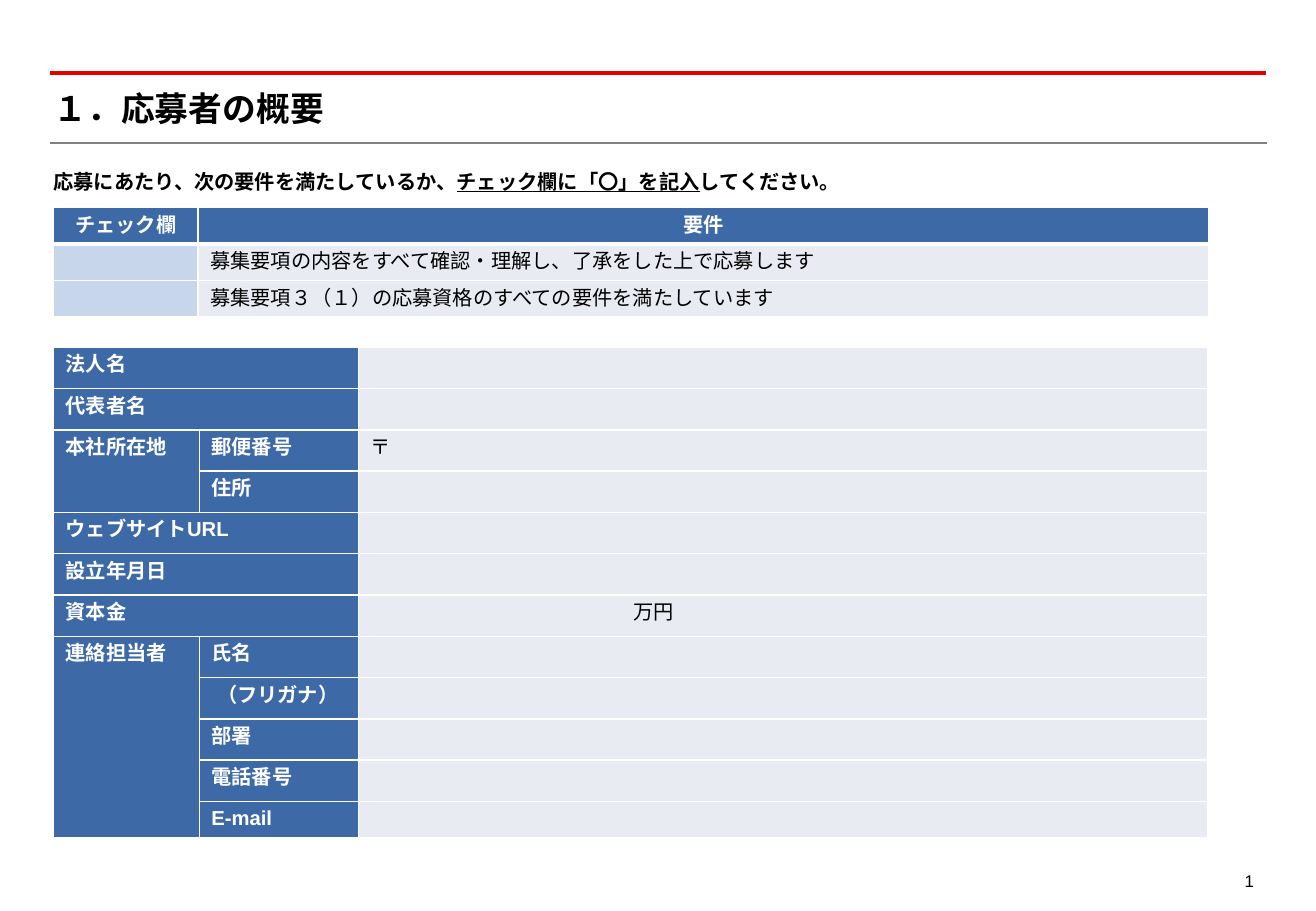
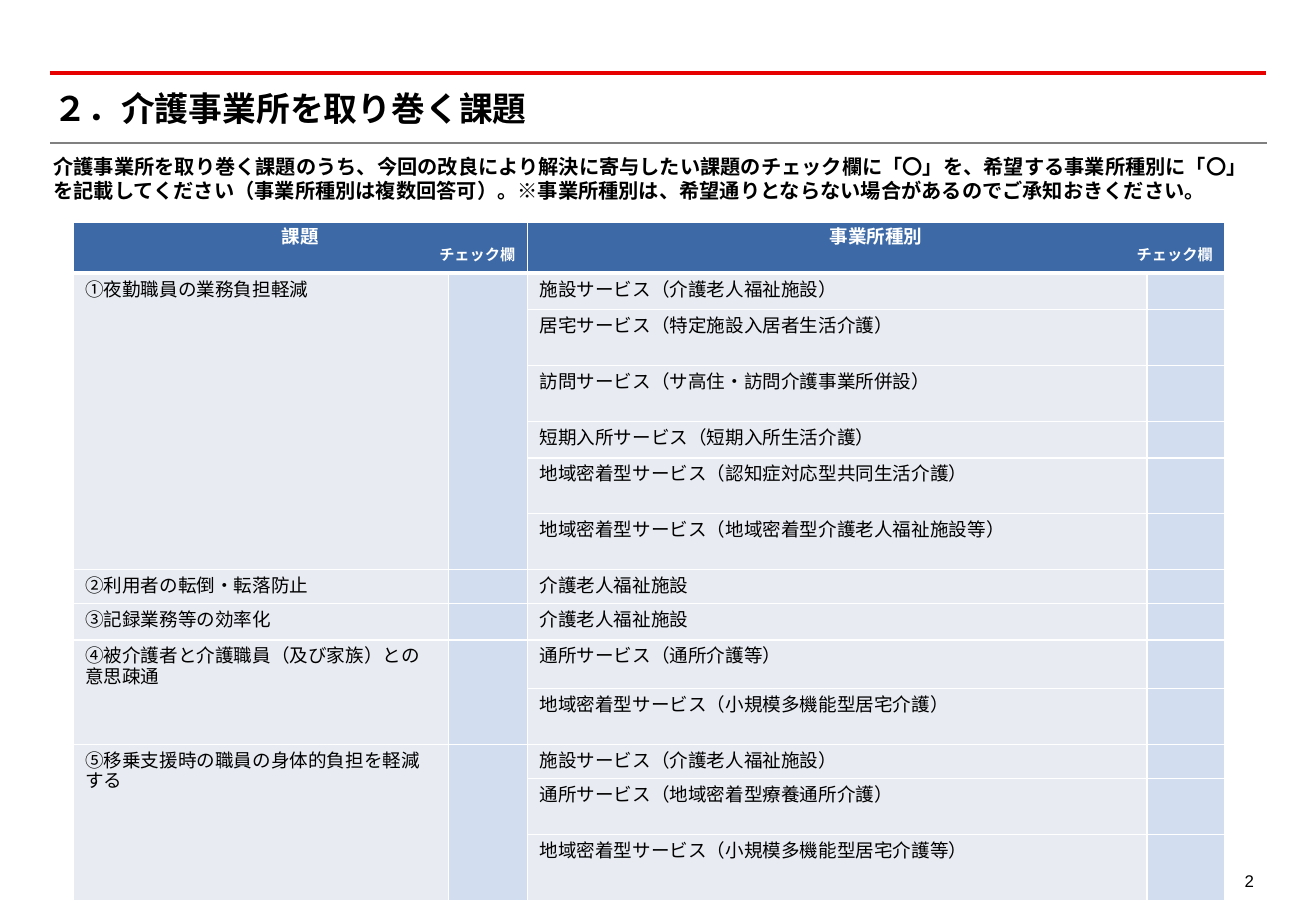
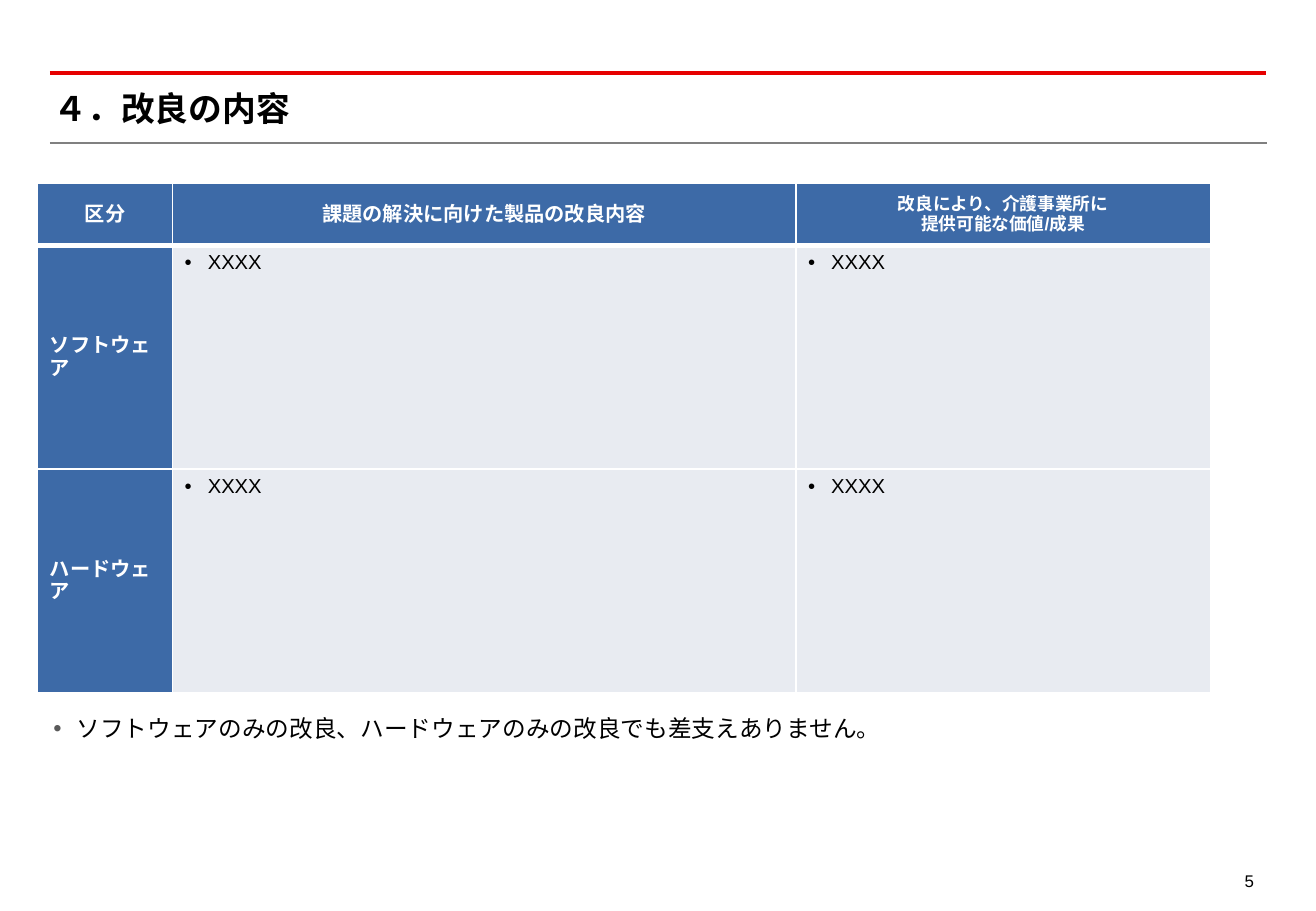
from lxml import etree
from pptx import Presentation
from pptx.dml.color import RGBColor
from pptx.enum.shapes import MSO_CONNECTOR
from pptx.enum.text import MSO_ANCHOR, PP_ALIGN
from pptx.oxml.ns import qn
from pptx.util import Inches, Pt

STRAIGHT = MSO_CONNECTOR.STRAIGHT
LEFT, CENTER, RIGHT = PP_ALIGN.LEFT, PP_ALIGN.CENTER, PP_ALIGN.RIGHT
TOP, MIDDLE = MSO_ANCHOR.TOP, MSO_ANCHOR.MIDDLE

FONT = "Arial"
COLORS = {
    "black": "000000", "white": "FFFFFF", "red": "E60000", "gray": "808080",
    "bullet": "5A5A5A", "blue": "3D6AA7", "pale": "E8EBF1",
    "check": "C7D6EA", "light_check": "D2DEEF",
}
STYLES = {
    "header": {"fill": "blue", "color": "white", "bold": True, "align": CENTER},
    "label": {"fill": "blue", "color": "white", "bold": True},
    "value": {"fill": "pale"},
    "check": {"fill": "check"},
    "light_check": {"fill": "light_check"},
}
MARGIN_LEFT = 0.44
TEXT_WIDTH = 9.91
HANGING = 0.19

COMPANY_ROWS = [
    ("法人名", [""]),
    ("代表者名", [""]),
    ("本社所在地", ["郵便番号", "住所"]),
    ("ウェブサイトURL", [""]),
    ("設立年月日", [""]),
    ("資本金", [""]),
    ("連絡担当者", ["氏名", " （フリガナ）", "部署", "電話番号", "E-mail"]),
]
COMPANY_VALUES = {"郵便番号": ("〒", 0.1), "資本金": ("万円", 2.26)}
REQUIREMENTS = [
    "募集要項の内容をすべて確認・理解し、了承をした上で応募します",
    "募集要項３（１）の応募資格のすべての要件を満たしています",
]
ISSUES = [
    ("①夜勤職員の業務負担軽減", [
        ("施設サービス（介護老人福祉施設）", 0.3),
        ("居宅サービス（特定施設入居者生活介護）", 0.46),
        ("訪問サービス（サ高住・訪問介護事業所併設）", 0.46),
        ("短期入所サービス（短期入所生活介護）", 0.3),
        ("地域密着型サービス（認知症対応型共同生活介護）", 0.46),
        ("地域密着型サービス（地域密着型介護老人福祉施設等）", 0.46)]),
    ("②利用者の転倒・転落防止", [("介護老人福祉施設", 0.28)]),
    ("③記録業務等の効率化", [("介護老人福祉施設", 0.3)]),
    ("④被介護者と介護職員（及び家族）との意思疎通", [
        ("通所サービス（通所介護等）", 0.4),
        ("地域密着型サービス（小規模多機能型居宅介護）", 0.46)]),
    ("⑤移乗支援時の職員の身体的負担を軽減する", [
        ("施設サービス（介護老人福祉施設）", 0.28),
        ("通所サービス（地域密着型療養通所介護）", 0.46),
        ("地域密着型サービス（小規模多機能型居宅介護等）", 0.55)]),
]


def rgb(name):
    return RGBColor.from_string(COLORS[name])


def add_span(para, text, size=12, color="black", **font_values):
    span = para.add_run()
    span.text = text
    values = {"name": FONT, "size": Pt(size), **font_values}
    for name, value in values.items():
        setattr(span.font, name, value)
    span.font.color.rgb = rgb(color)
    etree.SubElement(span.font._element, qn("a:ea"), typeface=FONT)


def add_bullet(para, color):
    properties = para._p.get_or_add_pPr()
    properties.set("marL", str(Inches(HANGING)))
    properties.set("indent", str(-Inches(HANGING)))
    holder = etree.SubElement(properties, qn("a:buClr"))
    etree.SubElement(holder, qn("a:srgbClr"), val=COLORS[color])
    etree.SubElement(properties, qn("a:buFont"), typeface=FONT)
    etree.SubElement(properties, qn("a:buChar"), char="•")


def add_text(page, place, spans, align=LEFT, inset=0, wrap=True, anchor=TOP, bullet=None):
    box = page.shapes.add_textbox(*map(Inches, place))
    frame = box.text_frame
    values = {"word_wrap": wrap, "vertical_anchor": anchor}
    for side in ("left", "top", "right", "bottom"):
        values["margin_" + side] = Inches(inset)
    for name, value in values.items():
        setattr(frame, name, value)
    para = frame.paragraphs[0]
    para.alignment = align
    if bullet:
        add_bullet(para, bullet)
    for text, font_values in spans:
        add_span(para, text, **font_values)


def add_rule(page, top, right, color, width):
    rule = page.shapes.add_connector(
        STRAIGHT, Inches(0.41), Inches(top), Inches(right), Inches(top))
    rule.line.color.rgb = rgb(color)
    rule.line.width = Pt(width)
    etree.SubElement(rule._element.spPr, qn("a:effectLst"))


def add_page(deck, title, number):
    page = deck.slides.add_slide(deck.slide_layouts[6])
    add_rule(page, 0.6, 10.42, "red", 2)
    add_rule(page, 1.18, 10.43, "gray", 1.25)
    add_text(page, (MARGIN_LEFT, 0.72, TEXT_WIDTH, 0.34),
             [(title, {"size": 20, "bold": True})], anchor=MIDDLE)
    add_text(page, (9.93, 7.12, 0.44, 0.28), [(number, {"size": 10})],
             align=RIGHT, inset=0.05, wrap=False)
    return page


def add_borders(cell, top, bottom):
    properties = cell._tc.get_or_add_tcPr()
    for side, width in (("L", 1), ("R", 1), ("T", top), ("B", bottom)):
        line = etree.SubElement(properties, qn("a:ln" + side), w=str(Pt(width)))
        fill = etree.SubElement(line, qn("a:solidFill"))
        etree.SubElement(fill, qn("a:srgbClr"), val=COLORS["white"])


def add_grid(page, left, top, columns, rows, size=12, header=True):
    place = (left, top, sum(columns), sum(rows))
    table = page.shapes.add_table(len(rows), len(columns), *map(Inches, place)).table
    for column, width in zip(table.columns, columns):
        column.width = Inches(width)
    for index, (row, height) in enumerate(zip(table.rows, rows)):
        row.height = Inches(height)
        for cell in row.cells:
            add_borders(cell, 3 if header and index == 1 else 1,
                        3 if header and index == 0 else 1)
            ending = cell.text_frame.paragraphs[0]._p.get_or_add_endParaRPr()
            ending.set("sz", str(size * 100))
    return table


def fill_cell(cell, style, lines=(), size=12, bottom=0.05, left=0.1,
              anchor=TOP, bullet=None):
    look = STYLES[style]
    cell.fill.solid()
    cell.fill.fore_color.rgb = rgb(look["fill"])
    values = {"margin_left": Inches(left), "margin_bottom": Inches(bottom),
              "vertical_anchor": anchor}
    for name, value in values.items():
        setattr(cell, name, value)
    for index, text in enumerate(lines):
        frame = cell.text_frame
        para = frame.add_paragraph() if index else frame.paragraphs[0]
        para.alignment = look.get("align", LEFT)
        if bullet:
            add_bullet(para, bullet)
        add_span(para, text, size, look.get("color", "black"),
                 bold=look.get("bold", False))


def add_requirements(page):
    table = add_grid(page, MARGIN_LEFT, 1.71, [1.19, 8.32], [0.3] * 3)
    for column, text in enumerate(["チェック欄", "要件"]):
        fill_cell(table.cell(0, column), "header", [text], bottom=0)
    for row, text in enumerate(REQUIREMENTS, 1):
        fill_cell(table.cell(row, 0), "check", bottom=0)
        fill_cell(table.cell(row, 1), "value", [text], bottom=0)


def add_company(page):
    table = add_grid(page, MARGIN_LEFT, 2.86, [1.2, 1.31, 6.99],
                     [0.34] * 11 + [0.28], header=False)
    row = 0
    for label, details in COMPANY_ROWS:
        last = row + len(details) - 1
        table.cell(row, 0).merge(table.cell(last, 0 if details[0] else 1))
        fill_cell(table.cell(row, 0), "label", [label])
        for detail in details:
            if detail:
                fill_cell(table.cell(row, 1), "label", [detail])
            text, left = COMPANY_VALUES.get(detail or label, ("", 0.1))
            fill_cell(table.cell(row, 2), "value", [text] if text else [], left=left)
            row += 1


def add_issues(page):
    heights = [height for _, services in ISSUES for _, height in services]
    table = add_grid(page, 0.6, 1.83, [3.09, 0.65, 5.1, 0.64], [0.42] + heights, 11)
    for column, text in ((0, "課題"), (2, "事業所種別")):
        cell = table.cell(0, column)
        cell.merge(table.cell(0, column + 1))
        fill_cell(cell, "header", [text], 11, 0)
        cell.margin_top = Inches(0.04)
        para = cell.text_frame.add_paragraph()
        para.alignment = RIGHT
        para.line_spacing = 0.9
        add_span(para, "チェック欄", 9, "white", bold=True)
    row = 1
    for issue, services in ISSUES:
        last = row + len(services) - 1
        for column, style, lines in ((0, "value", [issue]), (1, "light_check", [])):
            if last > row:
                table.cell(row, column).merge(table.cell(last, column))
            fill_cell(table.cell(row, column), style, lines, 11, 0)
        for service, _ in services:
            fill_cell(table.cell(row, 2), "value", [service], 11, 0)
            fill_cell(table.cell(row, 3), "light_check", (), 11, 0)
            row += 1


def add_improvements(page):
    table = add_grid(page, 0.31, 1.51, [1.11, 5.13, 3.41], [0.51, 1.84, 1.84])
    headings = [
        (["区分"], 12),
        (["課題の解決に向けた製品の改良内容"], 12),
        (["改良により、介護事業所に", "提供可能な価値/成果"], 10.5),
    ]
    for column, (lines, size) in enumerate(headings):
        fill_cell(table.cell(0, column), "header", lines, size, anchor=MIDDLE)
    for row, label in enumerate(["ソフトウェア", "ハードウェア"], 1):
        fill_cell(table.cell(row, 0), "label", [label], anchor=MIDDLE)
        for column in (1, 2):
            fill_cell(table.cell(row, column), "value", ["XXXX"], bullet="black")


def main():
    deck = Presentation()
    deck.slide_width, deck.slide_height = Inches(10.83), Inches(7.5)

    page = add_page(deck, "１．応募者の概要", "1")
    add_company(page)
    add_text(page, (MARGIN_LEFT, 1.39, TEXT_WIDTH, 0.22), [
        ("応募にあたり、次の要件を満たしているか、", {"bold": True}),
        ("チェック欄に「〇」を記入", {"bold": True, "underline": True}),
        ("してください。", {"bold": True})])
    add_requirements(page)

    page = add_page(deck, "２．介護事業所を取り巻く課題", "2")
    add_text(page, (MARGIN_LEFT, 1.27, TEXT_WIDTH, 0.7), [(
        "介護事業所を取り巻く課題のうち、今回の改良により解決に寄与したい課題の"
        "チェック欄に「〇」を、希望する事業所種別に「〇」を記載してください"
        "（事業所種別は複数回答可）。※事業所種別は、希望通りとならない場合が"
        "あるのでご承知おきください。", {"bold": True})])
    add_issues(page)

    page = add_page(deck, "４．改良の内容", "5")
    add_improvements(page)
    add_text(page, (MARGIN_LEFT, 5.88, 9.53, 0.25), [
        ("ソフトウェアのみの改良、ハードウェアのみの改良でも差支えありません。",
         {"size": 14})], bullet="bullet")

    deck.save("out.pptx")


if __name__ == "__main__":
    main()
